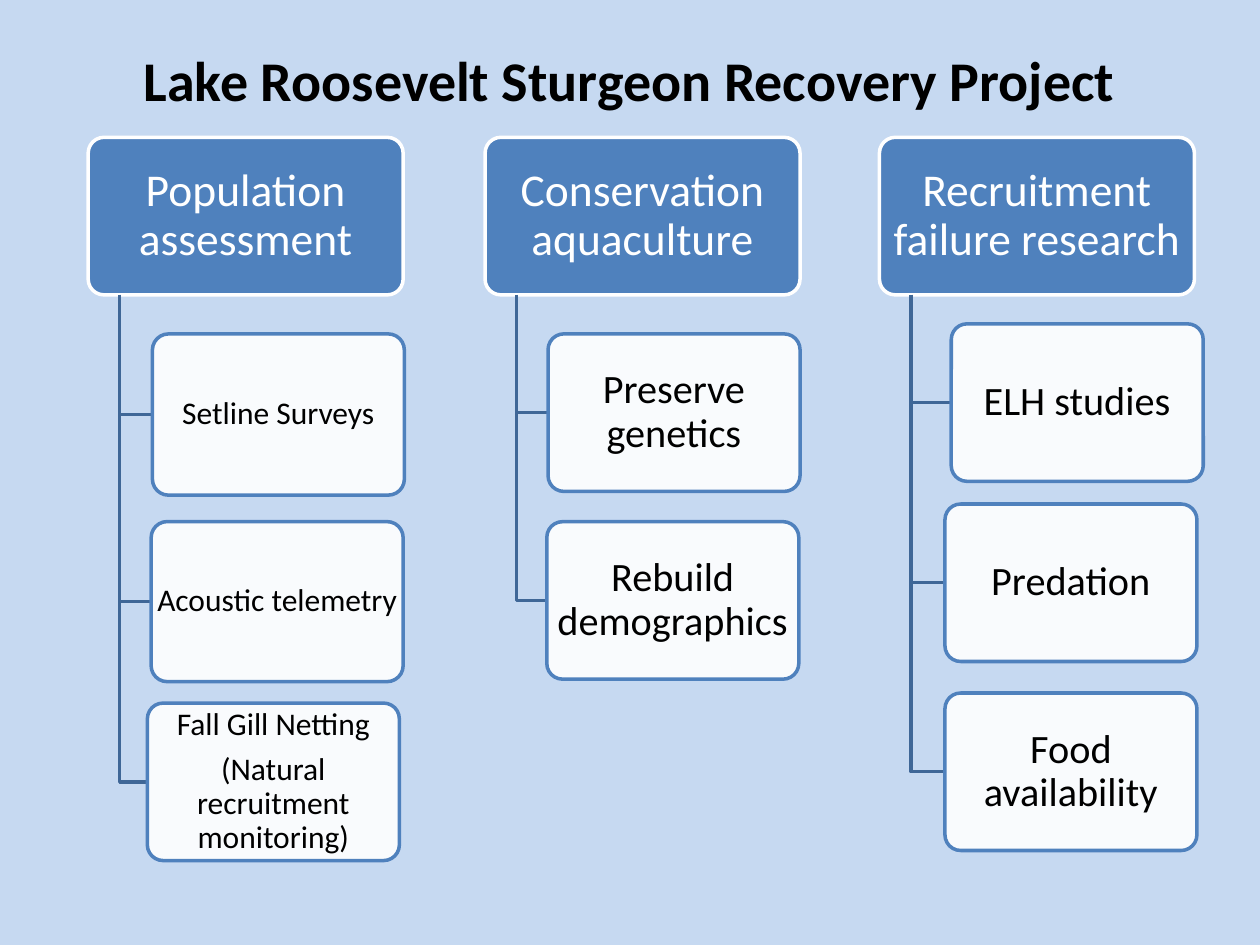
from dataclasses import dataclass

import lxml.etree
import pptx
import pptx.dml.color
import pptx.enum.shapes
import pptx.enum.text
import pptx.oxml.ns
import pptx.util

Inches = pptx.util.Inches
Pt = pptx.util.Pt


@dataclass(frozen=True)
class Theme:
    font: str = "Calibri"
    background: str = "C6D9F1"
    accent: str = "4F81BD"
    branch: str = "3F6797"
    light: str = "FFFFFF"
    dark: str = "000000"
    title_size: int = 32
    heading_size: int = 26
    task_size: int = 23
    small_task_size: int = 18
    line_width: int = 2
    task_opacity: int = 90


THEME = Theme()

HEADING_TOP, HEADING_WIDTH, HEADING_HEIGHT = 1.09, 2.5, 1.25
TASK_WIDTH = 2
TRUNK_OFFSET = 0.25

# Each column: left, heading, task type size, tasks.
# Each task: left, top, height, paragraphs.
COLUMNS = [
    (0.7, "Population assessment", THEME.small_task_size, [
        (1.21, 2.65, 1.28, ["Setline Surveys"]),
        (1.2, 4.14, 1.27, ["Acoustic telemetry"]),
        (1.17, 5.58, 1.25, ["Fall Gill Netting", "(Natural recruitment monitoring)"]),
    ]),
    (6.98, "Recruitment failure research", THEME.task_size, [
        (7.55, 2.57, 1.25, ["ELH studies"]),
        (7.5, 4, 1.25, ["Predation"]),
        (7.5, 5.5, 1.25, ["Food availability"]),
    ]),
    (3.85, "Conservation aquaculture", THEME.task_size, [
        (4.35, 2.65, 1.25, ["Preserve genetics"]),
        (4.34, 4.14, 1.25, ["Rebuild demographics"]),
    ]),
]


def rgb(value):
    return pptx.dml.color.RGBColor.from_string(value)


def set_line(shape, color):
    shape.line.color.rgb = rgb(color)
    shape.line.width = Pt(THEME.line_width)


def set_opacity(shape, percent):
    color = shape.fill._xPr.find(".//" + pptx.oxml.ns.qn("a:srgbClr"))
    alpha = lxml.etree.SubElement(color, pptx.oxml.ns.qn("a:alpha"))
    alpha.set("val", str(percent * 1000))


def write_text(shape, paragraphs, size, color, bold=False, line_spacing=1.0):
    frame = shape.text_frame
    frame.word_wrap = True
    frame.vertical_anchor = pptx.enum.text.MSO_ANCHOR.MIDDLE
    frame.margin_left = frame.margin_right = Inches(0.01)
    frame.margin_top = frame.margin_bottom = 0
    frame.text = "\n".join(paragraphs)
    for paragraph in frame.paragraphs:
        paragraph.alignment = pptx.enum.text.PP_ALIGN.CENTER
        paragraph.line_spacing = line_spacing
        paragraph.font.name = THEME.font
        paragraph.font.size = Pt(size)
        paragraph.font.bold = bold
        paragraph.font.color.rgb = rgb(color)
    for paragraph in frame.paragraphs[:-1]:
        paragraph.space_after = Pt(0.35 * size)


def add_title(slide, title):
    box = slide.shapes.add_textbox(Inches(0.33), Inches(0.25), Inches(9.33), Inches(0.75))
    write_text(box, [title], THEME.title_size, THEME.dark, bold=True)


def add_card(slide, left, top, width, height, paragraphs, size, fill, line, text_color):
    card = slide.shapes.add_shape(
        pptx.enum.shapes.MSO_SHAPE.ROUNDED_RECTANGLE,
        Inches(left), Inches(top), Inches(width), Inches(height))
    card.adjustments[0] = 0.1
    card.shadow.inherit = False
    card.fill.solid()
    card.fill.fore_color.rgb = rgb(fill)
    set_line(card, line)
    write_text(card, paragraphs, size, text_color, line_spacing=0.9)
    return card


def add_branch(slide, trunk, top, end, middle):
    """Draw an elbow down the trunk and across to a task."""
    builder = slide.shapes.build_freeform(Inches(trunk), Inches(top))
    builder.add_line_segments(
        [(Inches(trunk), Inches(middle)), (Inches(end), Inches(middle))], close=False)
    branch = builder.convert_to_shape()
    branch.shadow.inherit = False
    branch.fill.background()
    set_line(branch, THEME.branch)


def add_column(slide, left, heading, task_size, tasks):
    add_card(slide, left, HEADING_TOP, HEADING_WIDTH, HEADING_HEIGHT, [heading],
             THEME.heading_size, THEME.accent, THEME.light, THEME.light)
    for task_left, top, height, paragraphs in tasks:
        add_branch(slide, left + TRUNK_OFFSET, HEADING_TOP + HEADING_HEIGHT,
                   task_left, top + height / 2)
        task = add_card(slide, task_left, top, TASK_WIDTH, height, paragraphs,
                        task_size, THEME.light, THEME.accent, THEME.dark)
        set_opacity(task, THEME.task_opacity)


def main():
    deck = pptx.Presentation()
    deck.slide_width, deck.slide_height = Inches(10), Inches(7.5)
    slide = deck.slides.add_slide(deck.slide_layouts[6])
    slide.background.fill.solid()
    slide.background.fill.fore_color.rgb = rgb(THEME.background)
    add_title(slide, "Lake Roosevelt Sturgeon Recovery Project")
    for column in COLUMNS:
        add_column(slide, *column)
    deck.save("out.pptx")


if __name__ == "__main__":
    main()
